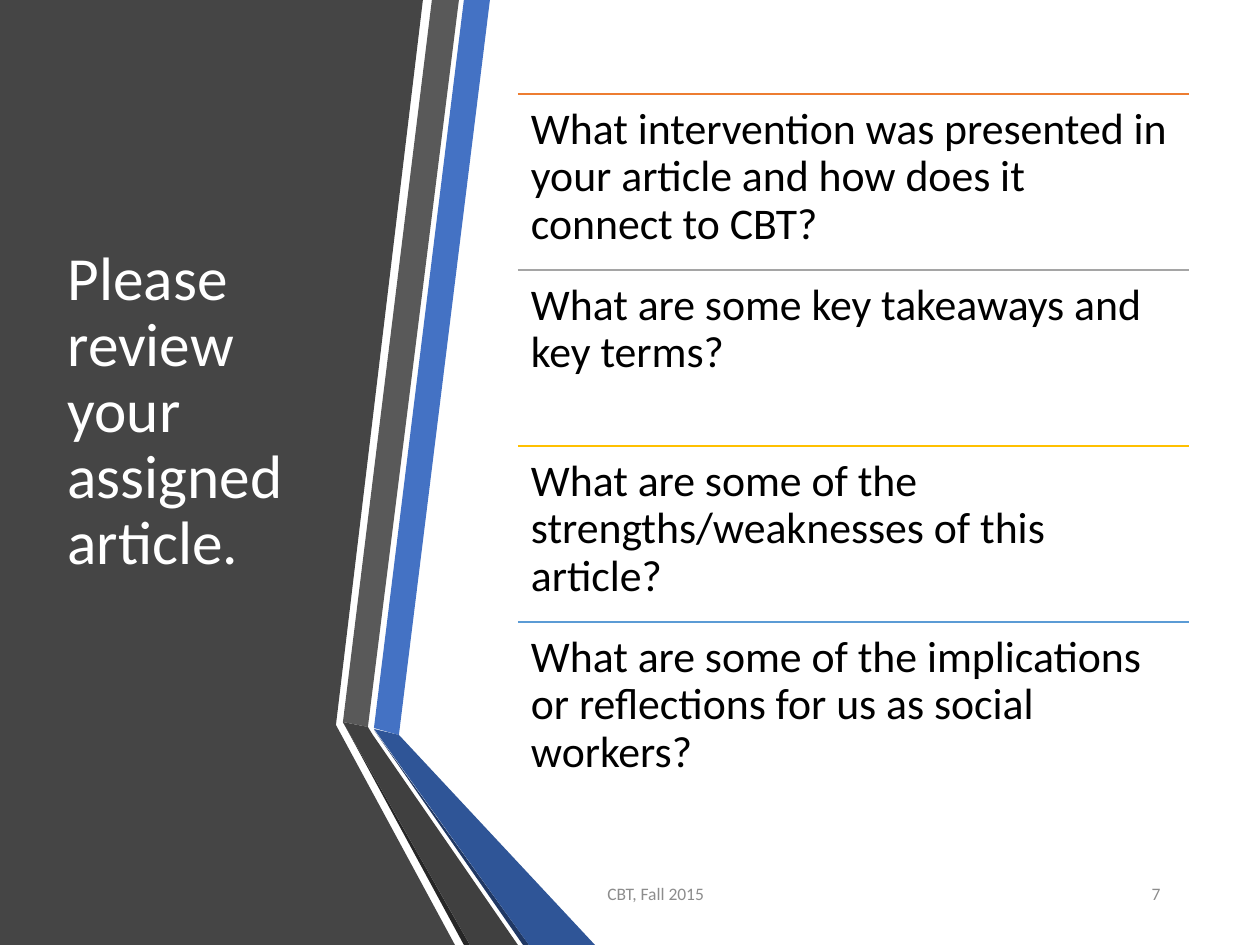
from lxml.etree import SubElement as Sub
from pptx import Presentation
from pptx.dml.color import RGBColor
from pptx.enum.shapes import MSO_CONNECTOR as Conn
from pptx.enum.text import MSO_ANCHOR as Anchor, MSO_AUTO_SIZE as Fit, PP_ALIGN as Align
from pptx.oxml.ns import qn
from pptx.util import Pt

PX = 914400 / 126
WIDE, HIGH = 1260, 945
LEFT, TOP, SPAN, STEP = 518, 94, 671, 176

BANDS = [
    ("454545", [(0, 0), (423, 0), (336, 725), (455, HIGH), (0, HIGH)]),
    ("4472C4", [(374, 728), (399, 735), (490, 0), (464, 0)]),
    ("595959", [(459, 0), (432, 0), (343, 722), (368, 727)]),
    ("262626", [(343, 722), (464, HIGH), (470, HIGH)]),
    ("203864", [(374, 730), (523, HIGH), (529, HIGH)]),
    ("2F5597", [(374, 729), (529, HIGH), (595, HIGH), (399, 735)]),
    ("404040", [(518, HIGH), (373, 735), (368, 727), (343, 722), (470, HIGH)]),
]

ITEMS = [
    ("ED7D31", "What intervention was presented in your article and how does it connect to CBT?"),
    ("A5A5A5", "What are some key takeaways and key terms?"),
    ("FFC000", "What are some of the strengths/weaknesses of this article?"),
    ("5B9BD5", "What are some of the implications or reflections for us as social workers?"),
]


def px(num):
    return round(num * PX)


def hue(code):
    return RGBColor.from_string(code)


def place(shape, x, y, w, h):
    shape.left, shape.top, shape.width, shape.height = map(px, (x, y, w, h))


def write(shape, text, size, color, anchor=Anchor.TOP, align=Align.LEFT, lead=1.0, after=0):
    frame = shape.text_frame
    frame.word_wrap = True
    frame.auto_size = Fit.NONE
    frame.vertical_anchor = anchor
    frame.text = text
    para = frame.paragraphs[0]
    para.alignment = align
    para.line_spacing = lead
    para.space_after = Pt(after)
    para.font.name = "Calibri"
    para.font.size = Pt(size)
    para.font.color.rgb = hue(color)
    return frame


def add_band(slide, color, points):
    pen = slide.shapes.build_freeform(*points[0], scale=PX)
    pen.add_line_segments(points[1:], close=True)
    band = pen.convert_to_shape()
    band.shadow.inherit = False
    band.fill.solid()
    band.fill.fore_color.rgb = hue(color)
    band.line.fill.background()


def add_text(slide, box, text, size, color, **style):
    shape = slide.shapes.add_textbox(*map(px, box))
    return write(shape, text, size, color, **style)


def add_rule(slide, x, y, w, color):
    rule = slide.shapes.add_connector(Conn.STRAIGHT, px(x), px(y), px(x + w), px(y))
    rule.line.color.rgb = hue(color)
    rule.line.width = Pt(1)
    Sub(rule._element.spPr, qn("a:effectLst"))


def add_item(slide, y, color, text):
    add_rule(slide, LEFT, y, SPAN, color)
    frame = add_text(slide, (LEFT, y, SPAN, STEP), text, 25, "000000", lead=0.9, after=9)
    frame.margin_left = frame.margin_right = px(13)
    frame.margin_top = frame.margin_bottom = px(13)


def set_title(slide, text):
    title = slide.shapes.title
    slide.shapes._spTree.append(title._element)
    place(title, 55, 94, 287, 703)
    frame = write(title, text, 35, "FFFFFF", anchor=Anchor.MIDDLE, lead=0.9)
    frame.margin_bottom = px(72)


def main():
    deck = Presentation()
    deck.slide_width, deck.slide_height = px(WIDE), px(HIGH)
    slide = deck.slides.add_slide(deck.slide_layouts[5])
    for color, points in BANDS:
        add_band(slide, color, points)
    set_title(slide, "Please review your assigned article.")
    foot = dict(anchor=Anchor.MIDDLE, after=6)
    add_text(slide, (595, 869, 403, 50), "CBT, Fall 2015", 10, "8C8C8C", **foot)
    add_text(slide, (1061, 869, 112, 50), "7", 10, "8C8C8C", align=Align.RIGHT, **foot)
    for row, (color, text) in enumerate(ITEMS):
        add_item(slide, TOP + row * STEP, color, text)
    deck.save("out.pptx")


if __name__ == "__main__":
    main()
